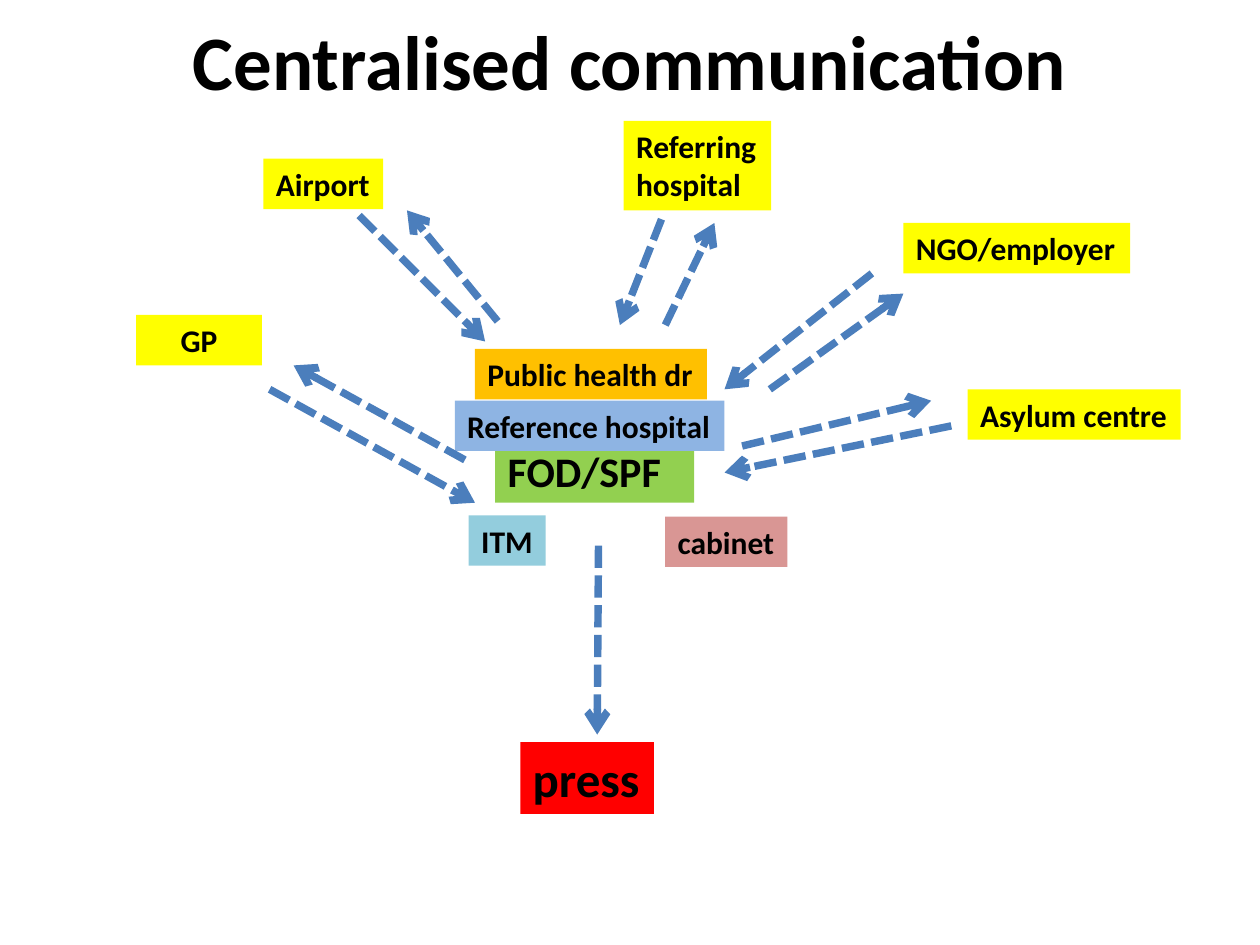
import pptx
import pptx.util
import pptx.dml.color
import pptx.enum.dml
import pptx.enum.shapes
import pptx.enum.text
import pptx.oxml.ns
from lxml import etree

Inches = pptx.util.Inches
Pt = pptx.util.Pt
RGBColor = pptx.dml.color.RGBColor
PP_ALIGN = pptx.enum.text.PP_ALIGN

FONT = "Calibri"
BLACK = RGBColor(0x00, 0x00, 0x00)
YELLOW = RGBColor(0xFF, 0xFF, 0x00)
GREEN = RGBColor(0x92, 0xD0, 0x50)
ORANGE = RGBColor(0xFF, 0xC0, 0x00)
LIGHT_BLUE = RGBColor(0x8E, 0xB4, 0xE3)
TEAL = RGBColor(0x93, 0xCD, 0xDD)
PINK = RGBColor(0xD9, 0x96, 0x94)
RED = RGBColor(0xFF, 0x00, 0x00)
ARROW_BLUE = RGBColor(0x4B, 0x7E, 0xBC)

# Parties, back to front: text, left, top, width, height, fill, size
PARTIES = [
    ("FOD/SPF", 3.93, 3.49, 1.58, 0.5, GREEN, 24),
    ("GP", 1.08, 2.5, 1, 0.4, YELLOW, 18),
    ("Referring hospital", 4.95, 0.96, 1.17, 0.71, YELLOW, 18),
    ("NGO/employer", 7.17, 1.77, 1.8, 0.4, YELLOW, 18),
    ("Asylum centre", 7.68, 3.09, 1.69, 0.4, YELLOW, 18),
    ("Airport", 2.09, 1.26, 0.95, 0.4, YELLOW, 18),
    ("Public health dr", 3.77, 2.77, 1.84, 0.4, ORANGE, 18),
    ("Reference hospital", 3.61, 3.18, 2.14, 0.4, LIGHT_BLUE, 18),
    ("press", 4.13, 5.89, 1.06, 0.57, RED, 28),
    ("cabinet", 5.28, 4.1, 0.97, 0.4, PINK, 18),
    ("ITM", 3.72, 4.09, 0.61, 0.4, TEAL, 18),
]
WRAPPED = {"FOD/SPF", "GP", "Referring hospital"}
CENTRED = {"GP"}

# Arrows: start x, start y, end x, end y
ARROWS = [
    # towards the centre
    (2.14, 3.09, 3.77, 3.99),
    (7.55, 3.38, 5.75, 3.75),
    (6.92, 2.17, 5.75, 3.09),
    (5.25, 1.74, 4.92, 2.58),
    (2.85, 1.71, 3.85, 2.71),
    # back to each party
    (5.89, 3.54, 7.39, 3.18),
    (6.11, 3.09, 7.17, 2.33),
    (5.28, 2.58, 5.67, 1.77),
    (3.95, 2.55, 3.23, 1.67),
    (3.69, 3.65, 2.33, 2.9),
    # out to the press
    (4.75, 4.33, 4.74, 5.83),
]


def set_text(tf, text, size, align):
    tf.text = text
    p = tf.paragraphs[0]
    p.alignment = align
    p.font.name = FONT
    p.font.size = Pt(size)
    p.font.bold = True
    p.font.color.rgb = BLACK


def add_title(slide, text):
    sp = slide.shapes.title
    sp.left, sp.top = Inches(0.5), Inches(0)
    sp.width, sp.height = Inches(9), Inches(0.95)
    sp.text_frame.vertical_anchor = pptx.enum.text.MSO_ANCHOR.MIDDLE
    set_text(sp.text_frame, text, 44, PP_ALIGN.CENTER)


def add_party(slide, text, left, top, width, height, fill, size):
    sp = slide.shapes.add_textbox(
        Inches(left), Inches(top), Inches(width), Inches(height))
    sp.fill.solid()
    sp.fill.fore_color.rgb = fill
    tf = sp.text_frame
    tf.word_wrap = text in WRAPPED
    tf.auto_size = pptx.enum.text.MSO_AUTO_SIZE.SHAPE_TO_FIT_TEXT
    set_text(tf, text, size,
             PP_ALIGN.CENTER if text in CENTRED else PP_ALIGN.LEFT)


def add_arrow(slide, x1, y1, x2, y2):
    cxn = slide.shapes.add_connector(
        pptx.enum.shapes.MSO_CONNECTOR.STRAIGHT,
        Inches(x1), Inches(y1), Inches(x2), Inches(y2))
    cxn.line.color.rgb = ARROW_BLUE
    cxn.line.width = Pt(4.25)
    cxn.line.dash_style = pptx.enum.dml.MSO_LINE.SQUARE_DOT
    # Arrowhead, and no theme shadow
    qn = pptx.oxml.ns.qn
    sp_pr = cxn._element.spPr
    etree.SubElement(sp_pr.find(qn("a:ln")), qn("a:tailEnd"), type="arrow")
    etree.SubElement(sp_pr, qn("a:effectLst"))


def main():
    prs = pptx.Presentation()
    prs.slide_width, prs.slide_height = Inches(10), Inches(7.5)
    slide = prs.slides.add_slide(prs.slide_layouts[5])
    add_title(slide, "Centralised communication")
    for party in PARTIES:
        add_party(slide, *party)
    for arrow in ARROWS:
        add_arrow(slide, *arrow)
    prs.save("out.pptx")


if __name__ == "__main__":
    main()
